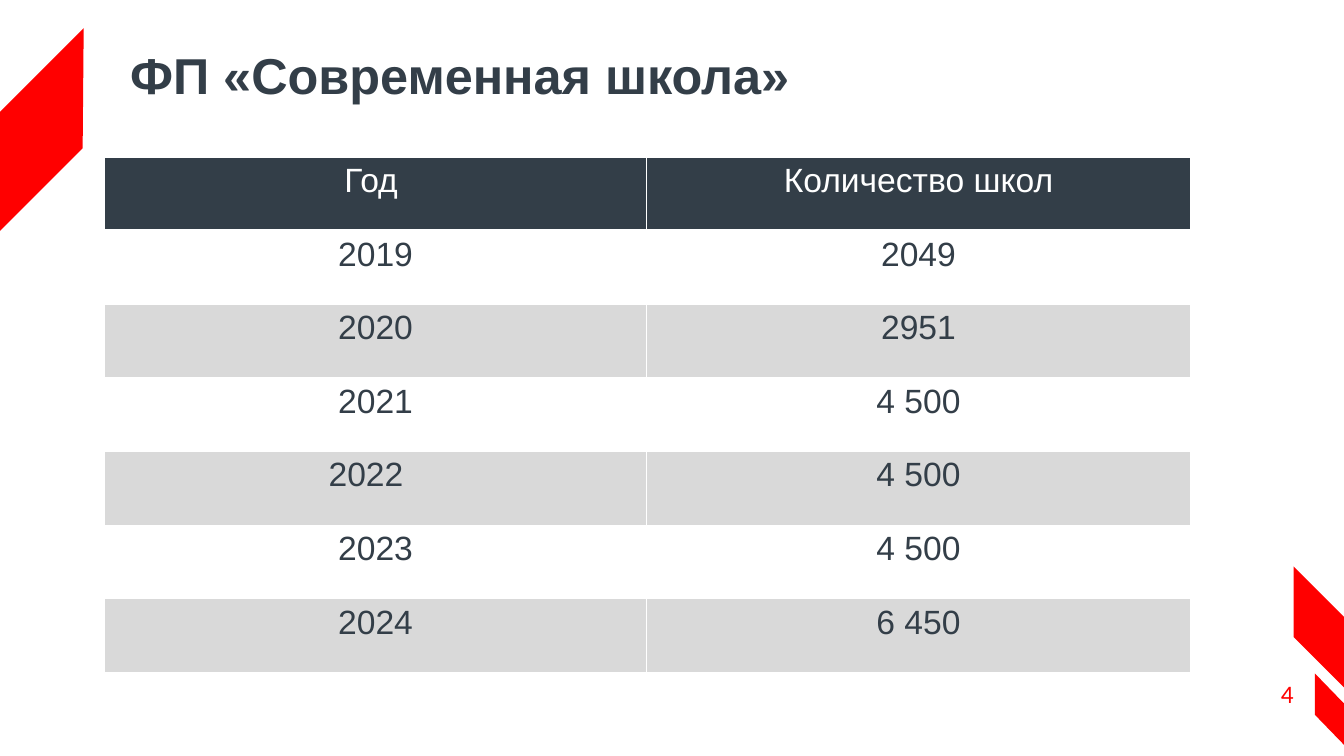
"""Builds the slide on the number of schools per year."""
from lxml import etree
from pptx import Presentation
from pptx.dml.color import RGBColor
from pptx.enum.text import MSO_ANCHOR, PP_ALIGN
from pptx.oxml.ns import qn
from pptx.util import Inches, Pt

LEFT, MID, RIGHT = PP_ALIGN.LEFT, PP_ALIGN.CENTER, PP_ALIGN.RIGHT
TOP, CENTER = MSO_ANCHOR.TOP, MSO_ANCHOR.MIDDLE
COLORS = {"red": "FF0000", "dark": "333E48", "white": "FFFFFF", "gray": "D9D9D9"}
PAD = 0.05
ROWS = [
    ("Год", "Количество школ"),
    ("2019", "2049"),
    ("2020", "2951"),
    ("2021", "4 500"),
    ("2022", "4 500"),
    ("2023", "4 500"),
    ("2024", "6 450"),
]
SHIFTS = {"Год": 0.09, "2022": 0.19}
BANDS = [
    [(-0.01, 2.3), (0, 1.11), (0.83, 0.28), (0.82, 1.47)],
    [(13.33, 6.82), (12.83, 6.32), (12.83, 5.62), (13.33, 6.12)],
    [(13.33, 7.39), (13.04, 7.09), (13.04, 6.68), (13.33, 6.98)],
]


class Deck:
    def __init__(self):
        self.prs = Presentation()
        self.prs.slide_width = Inches(13.33)
        self.prs.slide_height = Inches(7.5)
        self.slide = self.prs.slides.add_slide(self.prs.slide_layouts[6])

    def color(self, name):
        return RGBColor.from_string(COLORS[name])

    def paint(self, item, name):
        item.fill.solid()
        item.fill.fore_color.rgb = self.color(name)

    def style(self, para, size, name, align, face="Arial", bold=False):
        para.alignment = align
        for run in para.runs:
            font = run.font
            font.size, font.name, font.bold = Pt(size), face, bold
            font.color.rgb = self.color(name)

    def pad(self, item, extra=0):
        item.margin_left = item.margin_top = item.margin_bottom = Inches(PAD)
        item.margin_right = Inches(PAD + extra)

    def text(self, words, box, size, name, align, anchor=TOP, **font):
        frame = self.slide.shapes.add_textbox(*map(Inches, box)).text_frame
        frame.word_wrap = True
        frame.vertical_anchor = anchor
        self.pad(frame)
        frame.text = words
        self.style(frame.paragraphs[0], size, name, align, **font)
        return frame.paragraphs[0]

    def band(self, points):
        spots = [(Inches(x), Inches(y)) for x, y in points]
        pen = self.slide.shapes.build_freeform(*spots[0])
        pen.add_line_segments(spots[1:], close=True)
        shape = pen.convert_to_shape()
        shape.shadow.inherit = False
        self.paint(shape, "red")
        shape.line.fill.background()

    def border(self, cell, base):
        props = cell._tc.get_or_add_tcPr()
        for side in "LRTB":
            width = base if side == "B" else 1
            line = etree.SubElement(props, qn(f"a:ln{side}"), w=str(Pt(width)))
            fill = etree.SubElement(line, qn("a:solidFill"))
            etree.SubElement(fill, qn("a:srgbClr"), val=COLORS["white"])

    def table(self, rows, box, widths):
        frame = self.slide.shapes.add_table(len(rows), len(widths), *map(Inches, box))
        grid = frame.table
        for col, width in zip(grid.columns, widths):
            col.width = Inches(width)
        for i, row in enumerate(rows):
            grid.rows[i].height = Inches(box[3] / len(rows))
            back = "white" if i % 2 else "gray" if i else "dark"
            for j, words in enumerate(row):
                cell = grid.cell(i, j)
                cell.text = words
                self.pad(cell, SHIFTS.get(words, 0))
                self.border(cell, 1 if i else 3)
                self.paint(cell, back)
                ink = "dark" if i else "white"
                self.style(cell.text_frame.paragraphs[0], 24, ink, MID)


def main():
    deck = Deck()
    deck.text("4", (12.38, 6.68, 0.5, 0.4), 18, "red", RIGHT, face="Calibri")
    for points in BANDS:
        deck.band(points)
    deck.table(ROWS, (1.04, 1.56, 10.77, 5.11), (5.37, 5.4))
    title = deck.text("ФП «Современная школа»", (1.24, 0.45, 10.58, 0.65),
                      36, "dark", LEFT, CENTER, bold=True)
    title.line_spacing = 0.9
    deck.prs.save("out.pptx")


if __name__ == "__main__":
    main()
